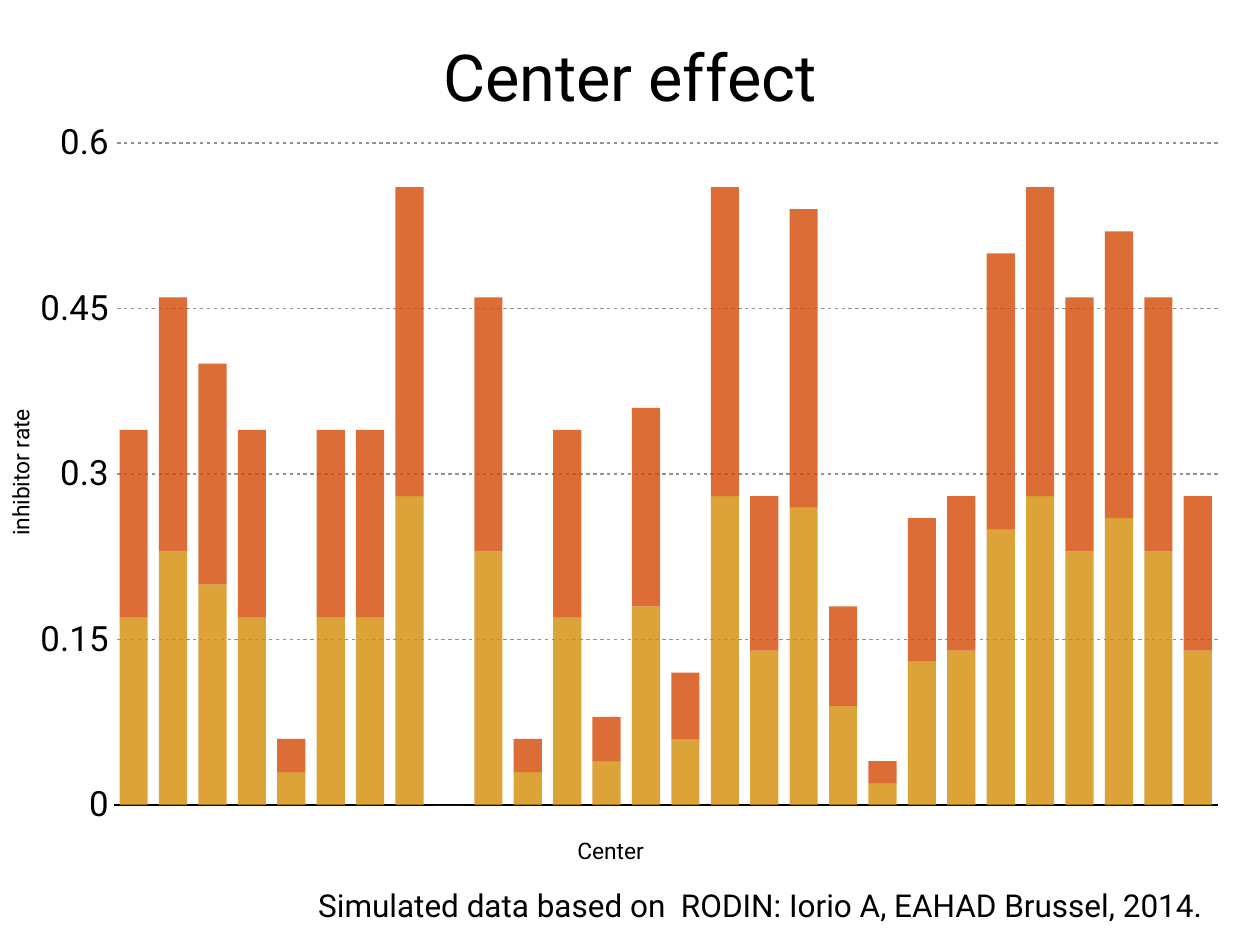
from lxml.etree import Element, SubElement
from pptx import Presentation
from pptx.chart.data import CategoryChartData
from pptx.dml.color import RGBColor
from pptx.enum.chart import XL_CHART_TYPE, XL_TICK_LABEL_POSITION, XL_TICK_MARK
from pptx.enum.text import MSO_ANCHOR, MSO_AUTO_SIZE, PP_ALIGN
from pptx.oxml.ns import qn
from pptx.util import Inches, Pt

FONT = "Roboto"
BLACK = "000000"
GRID_GREY = "929292"
SERIES_COLORS = {"Series 1": "D38C07", "Series 2": "D44906"}
SERIES_ALPHA = 80
# Both stacked series hold the same rate for each center.
CENTER_RATES = [
    0.17, 0.23, 0.2, 0.17, 0.03, 0.17, 0.17, 0.28, 0, 0.23, 0.03, 0.17, 0.04, 0.18,
    0.06, 0.28, 0.14, 0.27, 0.09, 0.02, 0.13, 0.14, 0.25, 0.28, 0.23, 0.26, 0.23, 0.14,
]


def rgb(hex_color):
    return RGBColor.from_string(hex_color)


def style_font(font, size):
    font.name = FONT
    font.size = Pt(size)
    font.color.rgb = rgb(BLACK)


def write_text(frame, text, size, inset=0, wrap=True):
    """Fill a frame with one centred line."""
    frame.margin_left = frame.margin_right = Inches(inset)
    frame.margin_top = frame.margin_bottom = Inches(inset)
    frame.vertical_anchor = MSO_ANCHOR.MIDDLE
    frame.word_wrap = wrap
    paragraph = frame.paragraphs[0]
    paragraph.alignment = PP_ALIGN.CENTER
    run = paragraph.add_run()
    run.text = text
    style_font(run.font, size)


def add_title(slide, text, box):
    title = slide.shapes.title
    title.left, title.top, title.width, title.height = map(Inches, box)
    write_text(title.text_frame, text, 37)
    title.text_frame.auto_size = MSO_AUTO_SIZE.NONE


def add_label(slide, text, box, size, inset=0, wrap=False, rotation=0):
    label = slide.shapes.add_textbox(*map(Inches, box))
    label.rotation = rotation
    write_text(label.text_frame, text, size, inset, wrap)
    label.text_frame.auto_size = MSO_AUTO_SIZE.SHAPE_TO_FIT_TEXT


def set_plot_area(chart, x, y, w, h):
    """Place the inner plot area, in shares of the chart's size."""
    plot_area = chart._chartSpace.chart.plotArea
    for old in plot_area.findall(qn("c:layout")):
        plot_area.remove(old)
    layout = Element(qn("c:layout"))
    manual = SubElement(layout, qn("c:manualLayout"))
    settings = {"layoutTarget": "inner", "xMode": "edge", "yMode": "edge",
                "x": x, "y": y, "w": w, "h": h}
    for tag, value in settings.items():
        SubElement(manual, qn(f"c:{tag}")).set("val", str(value))
    plot_area.insert(0, layout)


def style_axis(axis):
    axis.major_tick_mark = axis.minor_tick_mark = XL_TICK_MARK.NONE
    axis.tick_labels.number_format = "General"
    axis.tick_labels.number_format_is_linked = False
    style_font(axis.tick_labels.font, 20)


def style_line(line, color):
    line.color.rgb = rgb(color)
    line.width = Pt(1)


def style_gridlines(axis):
    """Draw grey gridlines with dashes and gaps of twice the line width."""
    axis.has_major_gridlines = True
    style_line(axis.major_gridlines.format.line, GRID_GREY)
    outline = axis._element.find(f"{qn('c:majorGridlines')}//{qn('a:ln')}")
    dash = SubElement(SubElement(outline, qn("a:custDash")), qn("a:ds"))
    dash.set("d", "200000")
    dash.set("sp", "200000")


def style_series(series):
    series.invert_if_negative = False
    fill = series.format.fill
    fill.solid()
    fill.fore_color.rgb = rgb(SERIES_COLORS[series.name])
    color = series._element.find(".//" + qn("a:srgbClr"))
    SubElement(color, qn("a:alpha")).set("val", str(SERIES_ALPHA * 1000))
    series.format.line.fill.background()


def add_rate_chart(slide, box):
    data = CategoryChartData()
    data.categories = [" "] * len(CENTER_RATES)
    for name in SERIES_COLORS:
        data.add_series(name, CENTER_RATES)
    chart = slide.shapes.add_chart(
        XL_CHART_TYPE.COLUMN_STACKED, *map(Inches, box), data).chart
    chart.has_title = chart.has_legend = False
    style_font(chart.font, 10)
    set_plot_area(chart, 0.057, 0.04, 0.943, 0.894)

    plot = chart.plots[0]
    plot.gap_width, plot.overlap = 40, 100
    plot.vary_by_categories = False
    for series in plot.series:
        style_series(series)

    centers, rates = chart.category_axis, chart.value_axis
    style_axis(centers)
    centers.tick_label_position = XL_TICK_LABEL_POSITION.LOW
    style_line(centers.format.line, BLACK)

    style_axis(rates)
    rates.minimum_scale, rates.maximum_scale, rates.major_unit = 0, 0.6, 0.15
    rates.format.line.fill.background()
    style_gridlines(rates)


def main():
    deck = Presentation()
    deck.slide_width, deck.slide_height = Inches(10), Inches(7.5)
    slide = deck.slides.add_slide(deck.slide_layouts[5])
    add_title(slide, "Center effect", (0.73, 0.26, 8.54, 0.68))
    add_rate_chart(slide, (0.32, 0.9, 9.35, 5.92))
    add_label(slide, "Simulated data based on  RODIN: Iorio A, EAHAD Brussel, 2014.",
              (2.34, 6.99, 7.39, 0.38), 18, inset=0.04)
    add_label(slide, "Center", (4.57, 6.64, 0.55, 0.22), 13)
    add_label(slide, "inhibitor rate", (-1.09, 3.64, 2.5, 0.22), 13,
              wrap=True, rotation=270)
    deck.save("out.pptx")


if __name__ == "__main__":
    main()
